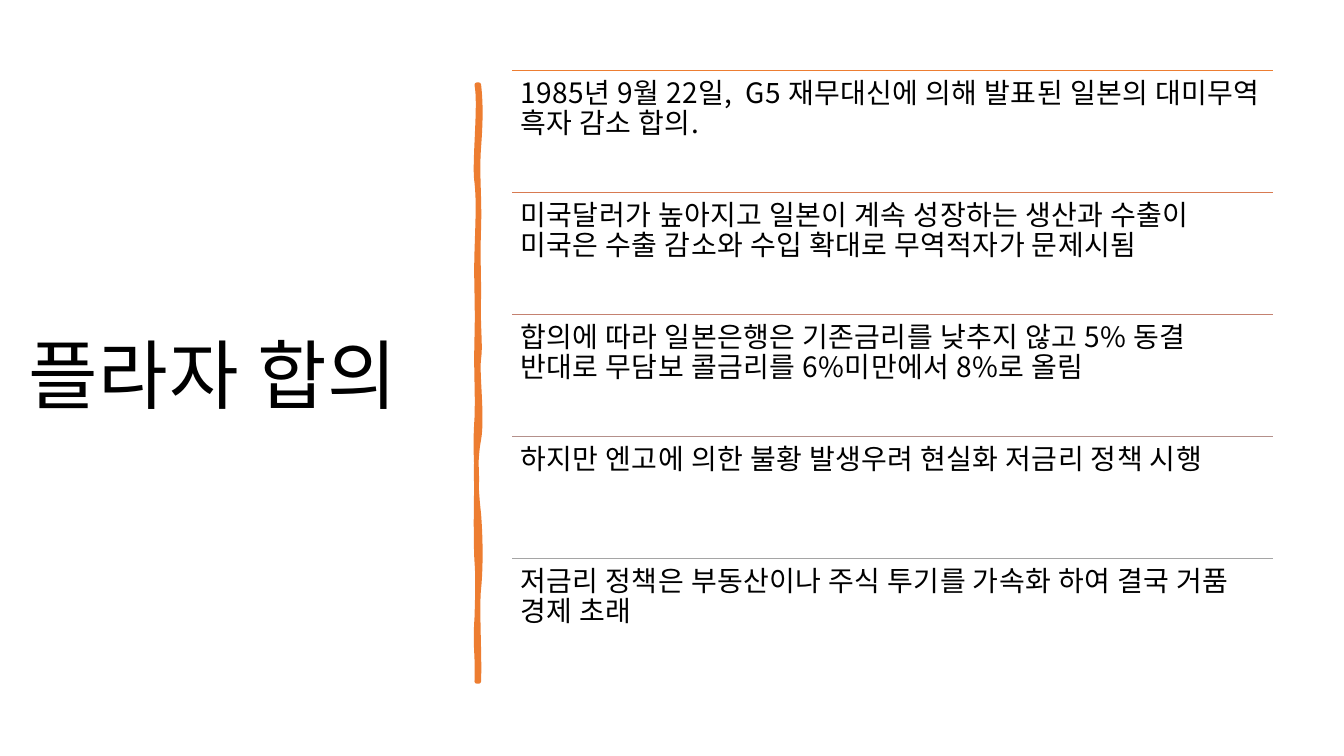
from lxml import etree
from pptx import Presentation
from pptx.dml.color import RGBColor
from pptx.enum.shapes import MSO_CONNECTOR
from pptx.enum.text import MSO_ANCHOR, PP_ALIGN
from pptx.oxml.ns import qn
from pptx.util import Pt

LINE = MSO_CONNECTOR.STRAIGHT
TOP, MID = MSO_ANCHOR.TOP, MSO_ANCHOR.MIDDLE
LEFT = PP_ALIGN.LEFT

# Brush edges, in units of 0.72 pt: two control points, then the end point
UNIT = 0.72
START = (475, 84)
EDGE = [
    (477, 102, 477, 119, 475, 146), (473, 173, 476, 195, 475, 226),
    (474, 257, 475, 262, 475, 294), (474, 325, 477, 342, 475, 356),
    (473, 370, 479, 414, 475, 436), (471, 457, 472, 484, 475, 510),
    (477, 536, 477, 564, 475, 584), (473, 603, 476, 650, 475, 676),
    (474, 676, 473, 676, 473, 676), (474, 646, 471, 644, 473, 613),
    (474, 583, 474, 570, 473, 557), (472, 544, 472, 495, 473, 477),
    (473, 459, 471, 445, 473, 415), (474, 386, 472, 373, 473, 335),
    (474, 298, 472, 281, 473, 250), (474, 218, 475, 200, 473, 181),
    (470, 163, 477, 104, 473, 84), (474, 84, 474, 84, 475, 84),
]

# Letter spacing, in points
TITLE, BODY, GAP = 0.7, 0.29, 5

# Line colour, then runs of words and spacing
ROWS = [
    ("ED7D31", [("1985년 9월 22일,", BODY), (" ", GAP),
                ("G5 재무대신에 의해 발표된 일본의 대미무역 흑자 감소 합의.", BODY)]),
    ("D87A51", [("미국달러가 높아지고 일본이 계속 성장하는 생산과 수출이 미국은 수출 감소와 수입 확대로 무역적자가 문제시됨", BODY)]),
    ("C48170", [("합의에 따라 일본은행은 기존금리를 낮추지 않고 5% 동결 반대로 무담보 콜금리를 6%미만에서 8%로 올림", BODY)]),
    ("B4908B", [("하지만 엔고에 의한 불황 발생우려 현실화 저금리 정책 시행", BODY)]),
    ("A5A5A5", [("저금리 정책은 부동산이나 주식 투기를 가속화 하여 결국 거품 경제 초래", BODY)]),
]


def color(code):
    return RGBColor.from_string(code)


class Deck:
    font = "Noto Sans CJK KR"
    ink = "000000"
    accent = "ED7D31"

    def __init__(self, wide, high):
        self.prs = Presentation()
        self.prs.slide_width, self.prs.slide_height = Pt(wide), Pt(high)
        self.slide = self.prs.slides.add_slide(self.prs.slide_layouts[6])
        self.shapes = self.slide.shapes

    def text(self, x, y, w, h, runs, size, inset, anchor=TOP):
        box = self.shapes.add_textbox(Pt(x), Pt(y), Pt(w), Pt(h))
        frame = box.text_frame
        frame.word_wrap = True
        frame.vertical_anchor = anchor
        frame.margin_left = frame.margin_right = Pt(inset[0])
        frame.margin_top = frame.margin_bottom = Pt(inset[1])
        para = frame.paragraphs[0]
        para.alignment = LEFT
        para.line_spacing = 0.9
        for words, space in runs:
            run = para.add_run()
            run.text = words
            run.font.size = Pt(size)
            run.font.name = self.font
            run.font.color.rgb = color(self.ink)
            props = run.font._element
            props.set("spc", str(round(space * 100)))
            etree.SubElement(props, qn("a:ea")).set("typeface", self.font)

    def rule(self, x, y, w, tint):
        line = self.shapes.add_connector(LINE, Pt(x), Pt(y), Pt(x + w), Pt(y))
        line.line.color.rgb = color(tint)
        line.line.width = Pt(1)
        etree.SubElement(line._element.spPr, qn("a:effectLst"))

    def brush(self, start, curves, width):
        ends = [curve[4:] for curve in curves]
        pen = self.shapes.build_freeform(*start, scale=Pt(UNIT))
        pen.add_line_segments(ends, close=True)
        shape = pen.convert_to_shape()
        shape.shadow.inherit = False
        shape.fill.solid()
        shape.fill.fore_color.rgb = color(self.accent)
        shape.line.color.rgb = color(self.accent)
        shape.line.width = Pt(width)
        ln = shape.line._ln
        ln.set("cap", "rnd")
        etree.SubElement(ln, qn("a:round"))

        # Bend each straight segment into its curve
        left = min(x for x, y in ends)
        top = min(y for x, y in ends)
        parts = list(shape._element.iter(qn("a:lnTo")))
        for part, curve in zip(parts, curves):
            bend = etree.Element(qn("a:cubicBezTo"))
            for x, y in zip(curve[::2], curve[1::2]):
                dot = etree.SubElement(bend, qn("a:pt"))
                dot.set("x", str(x - left))
                dot.set("y", str(y - top))
            part.getparent().replace(part, bend)


def main():
    deck = Deck(960, 540)

    # Title and brush stroke
    deck.text(13, 50.4, 306, 440, [("플라자 합의", TITLE)], 54, (7.2, 3.6), MID)
    deck.brush(START, EDGE, 3.25)

    # Ruled list
    left, top, wide, step = 365.8, 50.5, 543.6, 87.12
    for i, (tint, runs) in enumerate(ROWS):
        y = top + i * step
        deck.rule(left, y, wide, tint)
        deck.text(left, y, wide, step, runs, 20, (6, 6))

    deck.prs.save("out.pptx")


if __name__ == "__main__":
    main()
